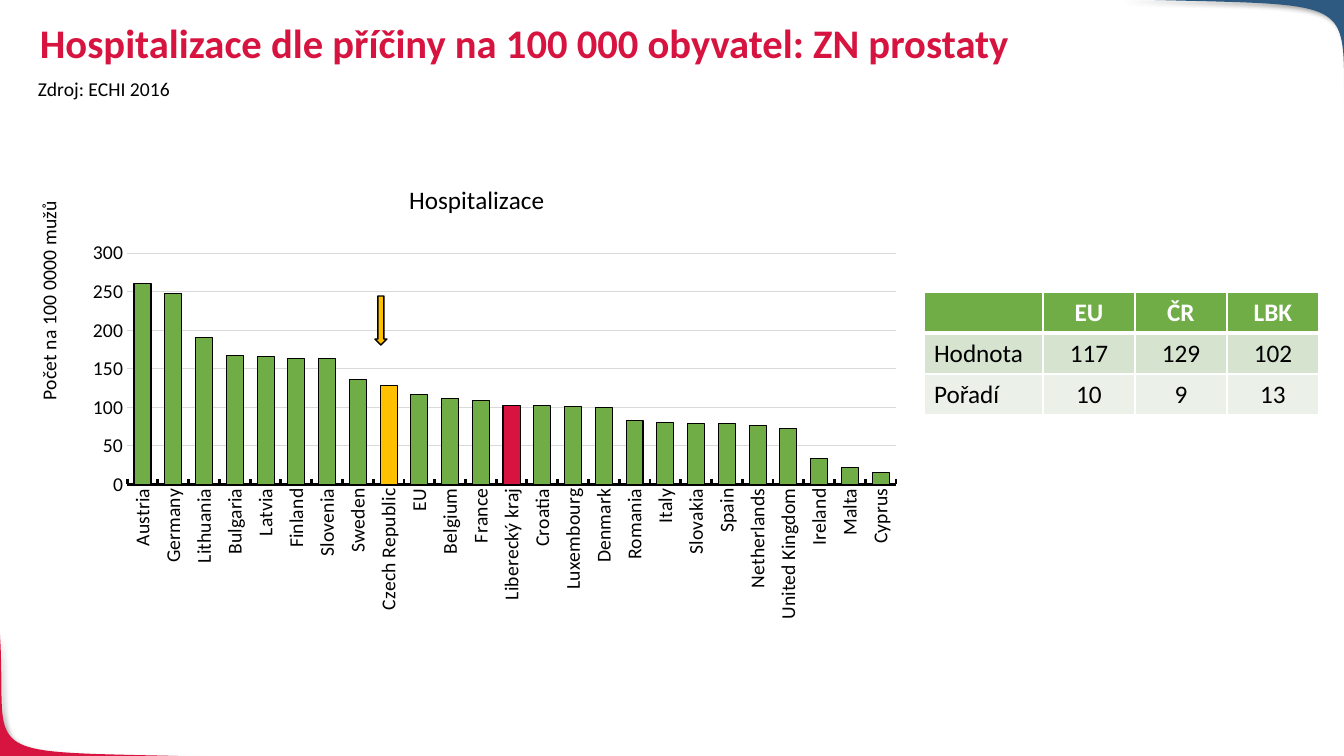
from lxml import etree
from pptx import Presentation
from pptx import util as u
from pptx.chart import data
from pptx.dml.color import RGBColor
from pptx.enum import chart as ch, shapes, text
from pptx.oxml import parse_xml
from pptx.oxml.ns import nsdecls, qn

PX = 12192000 / 1344
THEME = {
    "font": "Calibri", "black": "000000", "white": "FFFFFF", "red": "D71440",
    "blue": "2E5980", "green": "70AD47", "amber": "FFC000", "grid": "D9D9D9",
    "bands": ["70AD47", "D5E3CF", "EBF1E9"],
    "title": 29, "body": 18, "label": 14,
}


def write(tf, words, size, color="black", bold=False, align=None, spacing=None):
    p = tf.paragraphs[0]
    p.alignment = align
    if spacing:
        p.line_spacing = spacing
    r = p.add_run()
    r.text = words
    r.font.name = THEME["font"]
    r.font.size = u.Pt(THEME[size])
    r.font.bold = bold
    r.font.color.rgb = RGBColor.from_string(THEME[color])


def place(el, index, **box):
    for old in el.findall(qn("c:layout")):
        el.remove(old)
    layout = etree.Element(qn("c:layout"))
    manual = etree.SubElement(layout, qn("c:manualLayout"))
    if "w" in box:
        etree.SubElement(manual, qn("c:layoutTarget")).set("val", "inner")
    for side in "xy":
        etree.SubElement(manual, qn(f"c:{side}Mode")).set("val", "edge")
    for side, value in box.items():
        etree.SubElement(manual, qn(f"c:{side}")).set("val", str(value))
    el.insert(index, layout)


prs = Presentation()
prs.slide_width, prs.slide_height = round(1344 * PX), round(756 * PX)
s = prs.slides.add_slide(prs.slide_layouts[6])

corners = [
    ("red", [(215, 757), (-34, 750), (8, 765), (0, 635)], (-1, 757)),
    ("blue", [(1120, -1), (1381, 7), (1337, -10), (1346, 143)], (1346, -1)),
]
for color, curve, corner in corners:
    points = []
    for step in range(41):
        t = step / 40
        weights = [(1 - t) ** 3, 3 * t * (1 - t) ** 2, 3 * t * t * (1 - t), t ** 3]
        points.append([sum(w * c[i] for w, c in zip(weights, curve)) * PX for i in (0, 1)])
    points.append([c * PX for c in corner])
    builder = s.shapes.build_freeform(*points[0], scale=1.0)
    builder.add_line_segments(points[1:], close=True)
    sp = builder.convert_to_shape()
    sp.fill.solid()
    sp.fill.fore_color.rgb = RGBColor.from_string(THEME[color])
    sp.line.fill.background()
    sp._element.spPr.append(parse_xml(
        f'<a:effectLst {nsdecls("a")}><a:outerShdw blurRad="50800" dist="38100" '
        'dir="2700000" algn="tl" rotWithShape="0"><a:srgbClr val="000000">'
        '<a:alpha val="40000"/></a:srgbClr></a:outerShdw></a:effectLst>'))

source = s.shapes.add_textbox(*[round(v * PX) for v in (28, 72, 153, 34)])
source.text_frame.word_wrap = False
write(source.text_frame, "Zdroj: ECHI 2016", "label")

heading = s.shapes.add_textbox(*[round(v * PX) for v in (30, 18, 1159, 70)])
heading.text_frame.word_wrap = True
write(heading.text_frame, "Hospitalizace dle příčiny na 100 000 obyvatel: ZN prostaty",
      "title", color="red", bold=True, spacing=0.9)

rates = {
    "Austria": 261, "Germany": 248, "Lithuania": 190, "Bulgaria": 167, "Latvia": 166,
    "Finland": 163, "Slovenia": 163, "Sweden": 136, "Czech Republic": 129, "EU": 117,
    "Belgium": 112, "France": 109, "Liberecký kraj": 102, "Croatia": 102,
    "Luxembourg": 101, "Denmark": 100, "Romania": 83, "Italy": 80, "Slovakia": 79,
    "Spain": 79, "Netherlands": 76, "United Kingdom": 72, "Ireland": 34, "Malta": 22,
    "Cyprus": 16,
}
cd = data.CategoryChartData(number_format="#,##0")
cd.categories = list(rates)
cd.add_series("Hospitalizace", list(rates.values()))
chart = s.shapes.add_chart(ch.XL_CHART_TYPE.COLUMN_CLUSTERED,
                           *[round(v * PX) for v in (21, 169, 892, 460)], cd).chart
chart.has_legend = False
chart.font.name = THEME["font"]
chart.font.size = u.Pt(THEME["label"])
chart.font.color.rgb = RGBColor.from_string(THEME["black"])
write(chart.chart_title.text_frame, "Hospitalizace", "body")
place(chart.chart_title._element, 1, x=0.43, y=0.02)
place(chart._chartSpace.chart.plotArea, 0, x=0.119, y=0.183, w=0.862, h=0.503)

plot = chart.plots[0]
plot.vary_by_categories = False
plot.gap_width, plot.overlap = 81, -27
series = plot.series[0]
highlights = {"Czech Republic": "amber", "Liberecký kraj": "red"}
bars = [(series.format, "green")]
bars += [(series.points[list(rates).index(name)].format, color)
         for name, color in highlights.items()]
for bar, color in bars:
    bar.fill.solid()
    bar.fill.fore_color.rgb = RGBColor.from_string(THEME[color])
    bar.line.color.rgb = RGBColor.from_string(THEME["black"])
    bar.line.width = u.Pt(0.75)

cat = chart.category_axis
cat.major_tick_mark = ch.XL_TICK_MARK.INSIDE
cat.format.line.color.rgb = RGBColor.from_string(THEME["black"])
cat.format.line.width = u.Pt(2)
cat.tick_labels.font.size = u.Pt(THEME["label"])
cat._element.txPr.bodyPr.set("rot", "-5400000")
cat._element.txPr.bodyPr.set("vert", "horz")

val = chart.value_axis
val.minimum_scale, val.maximum_scale, val.major_unit = 0, 300, 50
val.major_tick_mark = ch.XL_TICK_MARK.NONE
val.format.line.fill.background()
val.major_gridlines.format.line.color.rgb = RGBColor.from_string(THEME["grid"])
val.major_gridlines.format.line.width = u.Pt(0.75)
val.tick_labels.number_format = "#,##0"
val.tick_labels.number_format_is_linked = False
tf = val.axis_title.text_frame
write(tf, "Počet na 100 0000 mužů", "label")
tf._txBody.bodyPr.set("rot", "-5400000")
tf._txBody.bodyPr.set("vert", "horz")
place(val.axis_title._element, 1, x=0.012, y=0.062)

arrow = s.shapes.add_shape(shapes.MSO_SHAPE.DOWN_ARROW,
                           *[round(v * PX) for v in (375, 296, 12, 49)])
arrow.shadow.inherit = False
arrow.fill.solid()
arrow.fill.fore_color.rgb = RGBColor.from_string(THEME["amber"])
arrow.line.color.rgb = RGBColor.from_string(THEME["black"])
arrow.line.width = u.Pt(1)

rows = [["", "EU", "ČR", "LBK"], ["Hodnota", "117", "129", "102"], ["Pořadí", "10", "9", "13"]]
table = s.shapes.add_table(3, 4, *[round(v * PX) for v in (924, 292, 394, 123)]).table
table.first_row = table.horz_banding = False
for column, width in zip(table.columns, (119, 92, 92, 92)):
    column.width = round(width * PX)
for i, row in enumerate(rows):
    table.rows[i].height = round(41 * PX)
    for j, words in enumerate(row):
        cell = table.cell(i, j)
        thick = {"lnB": 3} if i == 0 else {"lnT": 3} if i == 1 else {}
        for side in ("lnL", "lnR", "lnT", "lnB"):
            cell._tc.get_or_add_tcPr().append(parse_xml(
                f'<a:{side} {nsdecls("a")} w="{thick.get(side, 1) * 12700}"><a:solidFill>'
                f'<a:srgbClr val="{THEME["white"]}"/></a:solidFill></a:{side}>'))
        cell.fill.solid()
        cell.fill.fore_color.rgb = RGBColor.from_string(THEME["bands"][i])
        if j:
            cell.vertical_anchor = text.MSO_ANCHOR.MIDDLE
            cell.margin_left = cell.margin_right = cell.margin_top = round(PX)
            cell.margin_bottom = 0
        if words:
            write(cell.text_frame, words, "body", color="black" if i else "white",
                  bold=i == 0, align=text.PP_ALIGN.CENTER if j else None)

prs.save("out.pptx")
